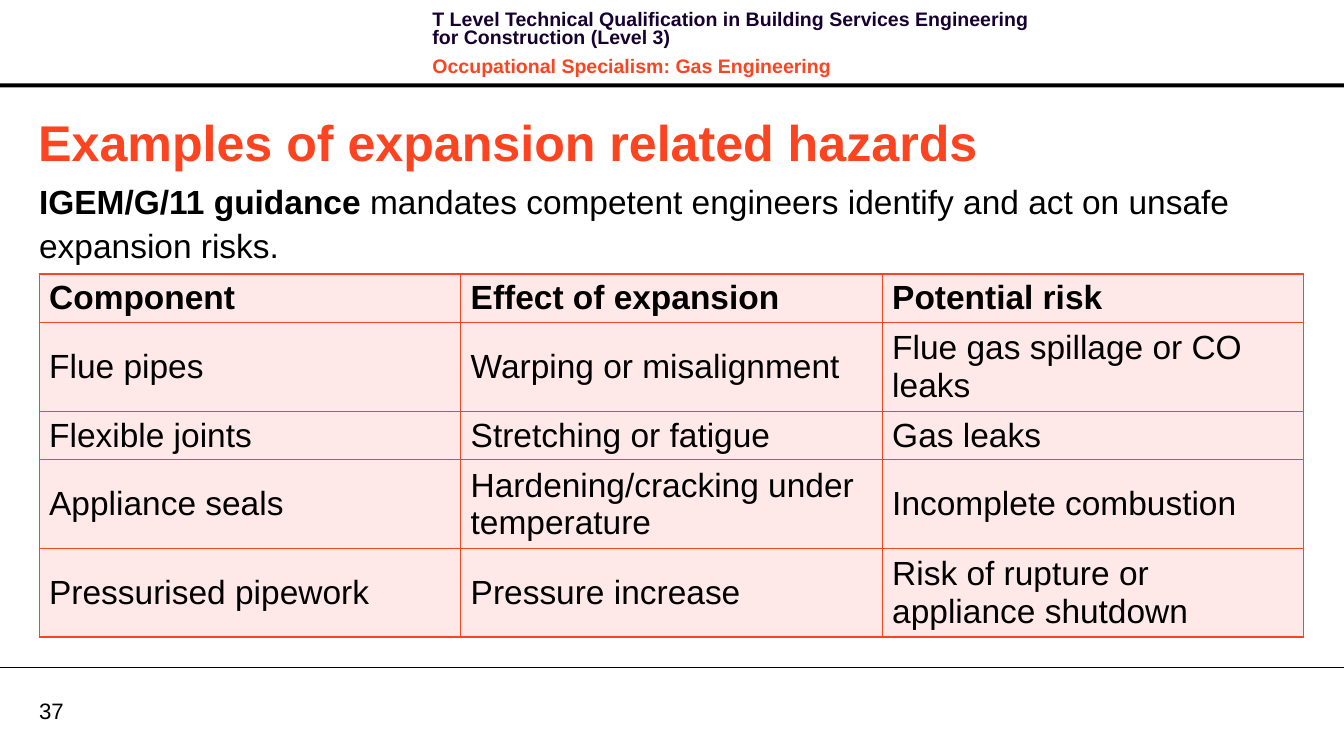
from dataclasses import dataclass

from lxml import etree
from pptx import Presentation
from pptx.dml.color import RGBColor
from pptx.enum import shapes, text
from pptx.oxml import ns
from pptx.util import Pt

BLACK = RGBColor(0x00, 0x00, 0x00)
ORANGE = RGBColor(0xFC, 0x44, 0x21)
NAVY = RGBColor(0x17, 0x01, 0x30)
BLUSH = RGBColor(0xFE, 0xE9, 0xE8)

PAGE_WIDTH, PAGE_HEIGHT = 964.08, 538.56
MARGIN = 28.1
COLUMN_WIDTH = 302.4
LINE_HEIGHT, CELL_PADDING = 27.6, 3
TABLE_TOP = 196.56

HAZARDS = [
    ["Component", "Effect of expansion", "Potential risk"],
    ["Flue pipes", "Warping or misalignment", "Flue gas spillage or CO leaks"],
    ["Flexible joints", "Stretching or fatigue", "Gas leaks"],
    ["Appliance seals", "Hardening/cracking under temperature", "Incomplete combustion"],
    ["Pressurised pipework", "Pressure increase", "Risk of rupture or appliance shutdown"],
]
LINES_PER_ROW = [1, 2, 1, 2, 2]


@dataclass
class Frame:
    left: float
    top: float
    width: float
    height: float

    def lengths(self) -> list:
        return [Pt(value) for value in (self.left, self.top, self.width, self.height)]


def add_span(para, words: str, *, size: float = 24, color: RGBColor = BLACK,
             bold: bool = False) -> None:
    span = para.add_run()
    span.text = words
    span.font.name = "Arial"
    span.font.size = Pt(size)
    span.font.bold = bold
    span.font.color.rgb = color


def add_box(page, frame: Frame, *, inset: bool = False, middle: bool = False):
    box = page.shapes.add_textbox(*frame.lengths()).text_frame
    box.word_wrap = True
    box.vertical_anchor = text.MSO_ANCHOR.MIDDLE if middle else text.MSO_ANCHOR.TOP
    box.margin_left = box.margin_right = Pt(7.2 if inset else 0)
    box.margin_top = box.margin_bottom = Pt(3.6 if inset else 0)
    return box


def add_bands(page) -> None:
    """Draw the thick rule under the header and the thin one above the footer."""
    bar = page.shapes.add_shape(shapes.MSO_SHAPE.RECTANGLE,
                                *Frame(0, 59.8, PAGE_WIDTH, 2.9).lengths())
    bar.shadow.inherit = False
    bar.fill.solid()
    bar.fill.fore_color.rgb = BLACK
    bar.line.fill.background()

    rule = page.shapes.add_connector(shapes.MSO_CONNECTOR.STRAIGHT,
                                     0, Pt(478.8), Pt(PAGE_WIDTH), Pt(478.8))
    rule.line.color.rgb = BLACK
    rule.line.width = Pt(0.75)
    etree.SubElement(rule._element.spPr, ns.qn("a:effectLst"))


def add_header(page) -> None:
    box = add_box(page, Frame(303.1, 5, 458.6, 46.1), inset=True)
    qualification = box.paragraphs[0]
    add_span(qualification, "T Level Technical Qualification in Building Services "
             "Engineering for Construction (Level 3)", size=14, color=NAVY, bold=True)
    specialism = box.add_paragraph()
    add_span(specialism, "Occupational Specialism: Gas Engineering",
             size=14, color=ORANGE, bold=True)
    specialism.space_before = Pt(4)
    for para in box.paragraphs:
        para.line_spacing = Pt(13.1)
        para.space_after = Pt(4)


def format_title(page) -> None:
    title = page.shapes.title
    title.left, title.top, title.width, title.height = Frame(20.2, 75.6, 915.8, 51.1).lengths()
    box = title.text_frame
    box.word_wrap = True
    box.auto_size = text.MSO_AUTO_SIZE.NONE
    box.vertical_anchor = text.MSO_ANCHOR.MIDDLE
    para = box.paragraphs[0]
    para.alignment = text.PP_ALIGN.LEFT
    add_span(para, "Examples of expansion related hazards", size=36, color=ORANGE, bold=True)


def add_guidance(page) -> None:
    para = add_box(page, Frame(MARGIN, 126.7, 892.1, 326.2)).paragraphs[0]
    para.line_spacing = 1.1
    para.space_after = Pt(12)
    add_span(para, "IGEM/G/11 guidance", bold=True)
    add_span(para, " mandates competent engineers identify and act on unsafe expansion risks.")


def add_borders(cell, color: RGBColor, width: float) -> None:
    properties = cell._tc.get_or_add_tcPr()
    for index, side in enumerate(("lnL", "lnR", "lnT", "lnB")):
        border = etree.Element(ns.qn(f"a:{side}"), w=str(Pt(width)))
        fill = etree.SubElement(border, ns.qn("a:solidFill"))
        etree.SubElement(fill, ns.qn("a:srgbClr"), val=str(color))
        properties.insert(index, border)


def add_hazard_table(page) -> None:
    heights = [lines * LINE_HEIGHT + 2 * CELL_PADDING for lines in LINES_PER_ROW]
    columns = len(HAZARDS[0])
    frame = Frame(MARGIN, TABLE_TOP, columns * COLUMN_WIDTH, sum(heights))
    table = page.shapes.add_table(len(HAZARDS), columns, *frame.lengths()).table
    table.horz_banding = False
    for column in table.columns:
        column.width = Pt(COLUMN_WIDTH)
    for row_index, (row, height) in enumerate(zip(HAZARDS, heights)):
        table.rows[row_index].height = Pt(height)
        for column_index, words in enumerate(row):
            cell = table.cell(row_index, column_index)
            cell.fill.solid()
            cell.fill.fore_color.rgb = BLUSH
            cell.vertical_anchor = text.MSO_ANCHOR.MIDDLE
            cell.margin_top = cell.margin_bottom = Pt(CELL_PADDING)
            add_span(cell.text_frame.paragraphs[0], words, bold=row_index == 0)
            add_borders(cell, ORANGE, 1)


def add_page_number(page) -> None:
    box = add_box(page, Frame(MARGIN, 499.7, 46.1, 19.4), middle=True)
    add_span(box.paragraphs[0], "37", size=16)


def main() -> None:
    deck = Presentation()
    deck.slide_width, deck.slide_height = Pt(PAGE_WIDTH), Pt(PAGE_HEIGHT)
    page = deck.slides.add_slide(deck.slide_layouts[5])
    add_bands(page)
    add_page_number(page)
    add_header(page)
    format_title(page)
    add_guidance(page)
    add_hazard_table(page)
    deck.save("out.pptx")


if __name__ == "__main__":
    main()
